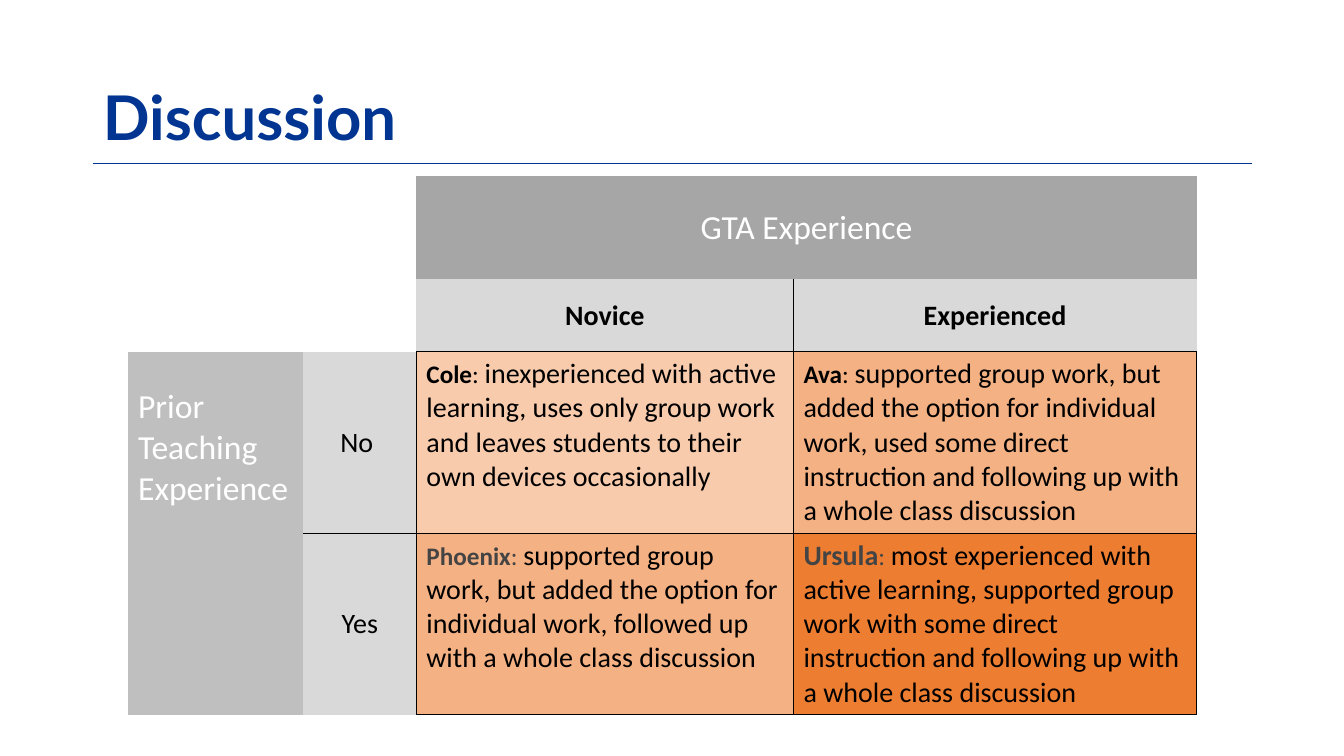
from lxml import etree
from pptx import Presentation
from pptx.dml.color import RGBColor
from pptx.enum.shapes import MSO_CONNECTOR
from pptx.enum.text import MSO_ANCHOR, PP_ALIGN
from pptx.oxml.ns import qn
from pptx.util import Inches, Pt

LEFT, MID = PP_ALIGN.LEFT, PP_ALIGN.CENTER
TOP, CENTER, BOTTOM = MSO_ANCHOR.TOP, MSO_ANCHOR.MIDDLE, MSO_ANCHOR.BOTTOM
BLUE, BLACK, WHITE, GRAY = "013591", "000000", "FFFFFF", "444444"


def tint(code):
    return RGBColor.from_string(code)


def write(para, text, size=20, color=BLACK, bold=False, face="Calibri", align=LEFT):
    para.alignment = align
    run = para.add_run()
    run.text = text
    font = run.font
    font.name, font.size, font.bold = face, Pt(size), bold
    font.color.rgb = tint(color)


deck = Presentation()
deck.slide_width, deck.slide_height = Inches(13.33), Inches(7.5)
slide = deck.slides.add_slide(deck.slide_layouts[5])

title = slide.shapes.title
title.left, title.top = Inches(0.92), Inches(0.62)
title.width, title.height = Inches(11.5), Inches(0.96)
title.text_frame.vertical_anchor = BOTTOM
head = title.text_frame.paragraphs[0]
head.line_spacing = 0.9
write(head, "Discussion", size=44, color=BLUE, bold=True, face="Lato")

rule = slide.shapes.add_connector(
    MSO_CONNECTOR.STRAIGHT, Inches(0.92), Inches(1.62), Inches(12.42), Inches(1.62))
rule.line.color.rgb = tint(BLUE)
rule.line.width = Pt(1)
etree.SubElement(rule._element.spPr, qn("a:effectLst"))

cols = [1.74, 1.12, 3.74, 4]
rows = [1.02, 0.72, 1.8, 1.8]
frame = slide.shapes.add_table(
    len(rows), len(cols), Inches(1.27), Inches(1.75), Inches(sum(cols)), Inches(sum(rows)))
grid = frame.table
grid.first_row = grid.horz_banding = False
grid._tbl.tblPr.find(qn("a:tableStyleId")).text = "{2D5ABB26-0587-4C30-8999-92F81FD0307C}"
for col, width in zip(grid.columns, cols):
    col.width = Inches(width)
for row, height in zip(grid.rows, rows):
    row.height = Inches(height)
grid.cell(0, 2).merge(grid.cell(0, 3))
grid.cell(2, 0).merge(grid.cell(3, 0))

labels = [
    (0, 2, "GTA Experience", "A6A6A6", "", dict(size=24, color=WHITE, align=MID)),
    (1, 2, "Novice", "D9D9D9", "RB", dict(bold=True, align=MID)),
    (1, 3, "Experienced", "D9D9D9", "LB", dict(bold=True, align=MID)),
    (2, 0, "Prior Teaching Experience", "BFBFBF", "", dict(size=24, color=WHITE)),
    (2, 1, "No ", "D9D9D9", "RB", dict(align=MID)),
    (3, 1, "Yes", "D9D9D9", "TR", dict(align=MID)),
]
cases = [
    (2, 2, "Cole", ": ", "inexperienced with active learning, uses only group work and "
     "leaves students to their own devices occasionally", "F8CBAD", BLACK, 18),
    (2, 3, "Ava", ": ", "supported group work, but added the option for individual work, "
     "used some direct instruction and following up with a whole class discussion",
     "F4B183", BLACK, 18),
    (3, 2, "Phoenix", ": ", "supported group work, but added the option for "
     "individual work, followed up with a whole class discussion", "F4B183", GRAY, 18),
    (3, 3, "Ursula", ": ", "most experienced with active learning, supported group work with "
     "some direct instruction and following up with a whole class discussion",
     "ED7D31", GRAY, 20),
]

edges = {}
for r, c, text, fill, sides, style in labels:
    cell = grid.cell(r, c)
    cell.vertical_anchor = CENTER if c else TOP
    write(cell.text_frame.paragraphs[0], text, **style)
    edges[r, c] = fill, sides
grid.cell(2, 0).margin_top = Inches(0.35)

for r, c, name, mark, text, fill, color, size in cases:
    para = grid.cell(r, c).text_frame.paragraphs[0]
    write(para, name, size=size, color=color, bold=True)
    write(para, mark, size=18, color=color)
    write(para, text)
    edges[r, c] = fill, "LRTB"

for (r, c), (fill, sides) in edges.items():
    cell = grid.cell(r, c)
    props = cell._tc.get_or_add_tcPr()
    for side in "LRTB":
        if side in sides:
            line = etree.SubElement(props, qn(f"a:ln{side}"), w=str(Pt(1)))
            paint = etree.SubElement(line, qn("a:solidFill"))
            etree.SubElement(paint, qn("a:srgbClr"), val=BLACK)
    cell.fill.solid()
    cell.fill.fore_color.rgb = tint(fill)

deck.save("out.pptx")
